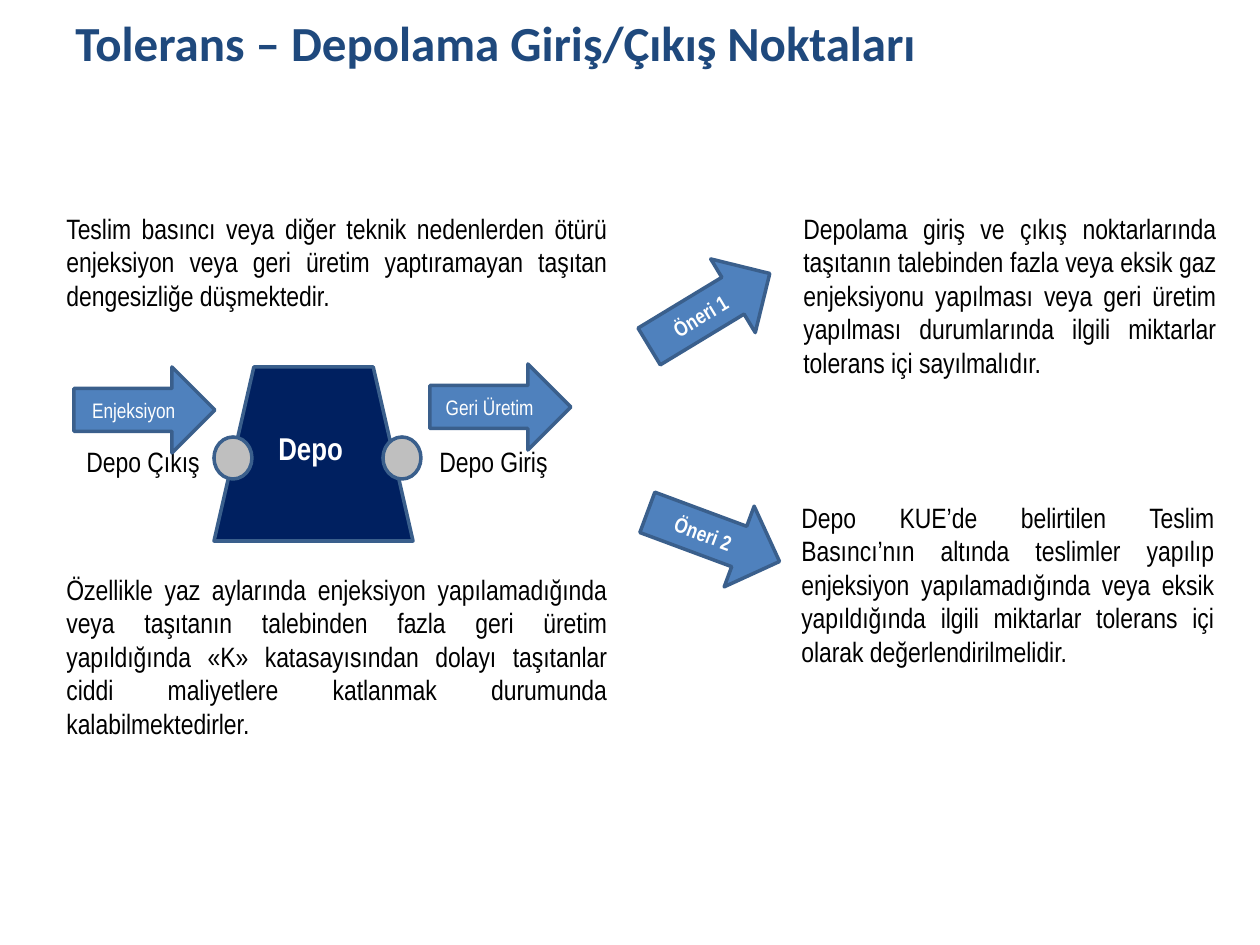
"""Build the slide on tolerance at storage entry and exit points."""
from pptx import Presentation
from pptx import util as u
from pptx.dml.color import RGBColor
from pptx.enum import shapes, text

COLORS = {
    "title": "1F497D", "body": "000000", "light": "FFFFFF", "outline": "3A5F8C",
    "arrow": "4F81BD", "storage": "002060", "point": "BFBFBF",
}
ARROW_SIZE = (141, 86)
POINT_SIZE = (38, 42)
BODY_FONT = "Arial Narrow"

PARAGRAPHS = [
    ((54, 205, 566, 115),
     "Teslim basıncı veya diğer teknik nedenlerden ötürü enjeksiyon veya geri "
     "üretim yaptıramayan taşıtan dengesizliğe düşmektedir."),
    ((54, 566, 566, 204),
     "Özellikle yaz aylarında enjeksiyon yapılamadığında veya taşıtanın "
     "talebinden fazla geri üretim yapıldığında «K» katasayısından dolayı "
     "taşıtanlar ciddi maliyetlere katlanmak durumunda kalabilmektedirler."),
    ((791, 205, 438, 183),
     "Depolama giriş ve çıkış noktarlarında taşıtanın talebinden fazla veya "
     "eksik gaz enjeksiyonu yapılması veya geri üretim yapılması durumlarında "
     "ilgili miktarlar tolerans içi sayılmalıdır."),
    ((789, 494, 438, 204),
     "Depo KUE’de belirtilen Teslim Basıncı’nın altında teslimler yapılıp "
     "enjeksiyon yapılamadığında veya eksik yapıldığında ilgili miktarlar "
     "tolerans içi olarak değerlendirilmelidir."),
]
ARROWS = [
    ((74, 367), "Enjeksiyon", 0, False),
    ((430, 364), "Geri Üretim", 0, False),
    ((639, 267), "Öneri 1", 328.8, True),
    ((643, 494), "Öneri 2", 20.4, True),
]


def px(length):
    return u.Emu(round(length * 914400 / 126))


def color(name):
    return RGBColor.from_string(COLORS[name])


def write(shape, words, size, ink, bold=False, align=None, font=BODY_FONT):
    frame = shape.text_frame
    frame.word_wrap = True
    paragraph = frame.paragraphs[0]
    paragraph.text = words
    paragraph.alignment = align or text.PP_ALIGN.LEFT
    paragraph.font.name = font
    paragraph.font.size = u.Pt(size)
    paragraph.font.bold = bold
    paragraph.font.color.rgb = color(ink)


def add_text(slide, box, words, size=16, ink="body", **style):
    shape = slide.shapes.add_textbox(*map(px, box))
    write(shape, words, size, ink, **style)


def add_outlined(slide, kind, box, fill, rotation=0):
    shape = slide.shapes.add_shape(kind, *map(px, box))
    shape.shadow.inherit = False
    shape.fill.solid()
    shape.fill.fore_color.rgb = color(fill)
    shape.line.color.rgb = color("outline")
    shape.line.width = u.Pt(2)
    shape.rotation = rotation
    return shape


def add_arrow(slide, corner, words, rotation, bold):
    arrow = add_outlined(slide, shapes.MSO_SHAPE.RIGHT_ARROW,
                         corner + ARROW_SIZE, "arrow", rotation)
    write(arrow, words, 12, "light", bold, text.PP_ALIGN.CENTER)
    arrow.text_frame.vertical_anchor = text.MSO_ANCHOR.MIDDLE


def add_storage(slide):
    add_outlined(slide, shapes.MSO_SHAPE.FLOWCHART_MANUAL_OPERATION,
                 (214, 367, 199, 174), "storage", 180)
    for left in (214, 383):
        add_outlined(slide, shapes.MSO_SHAPE.OVAL, (left, 437) + POINT_SIZE, "point")
    add_text(slide, (74, 438, 248, 52), "Depo Çıkış")
    add_text(slide, (427, 438, 134, 52), "Depo Giriş")
    add_text(slide, (266, 423, 166, 57), "Depo", 18, "light", bold=True)


def main():
    presentation = Presentation()
    presentation.slide_width, presentation.slide_height = px(1260), px(945)
    slide = presentation.slides.add_slide(presentation.slide_layouts[6])
    add_text(slide, (63, 6, 1134, 158), "Tolerans – Depolama Giriş/Çıkış Noktaları",
             28, "title", bold=True, font="Calibri")
    add_storage(slide)
    for arrow in ARROWS:
        add_arrow(slide, *arrow)
    for box, words in PARAGRAPHS:
        add_text(slide, box, words, align=text.PP_ALIGN.JUSTIFY)
    presentation.save("out.pptx")


if __name__ == "__main__":
    main()
